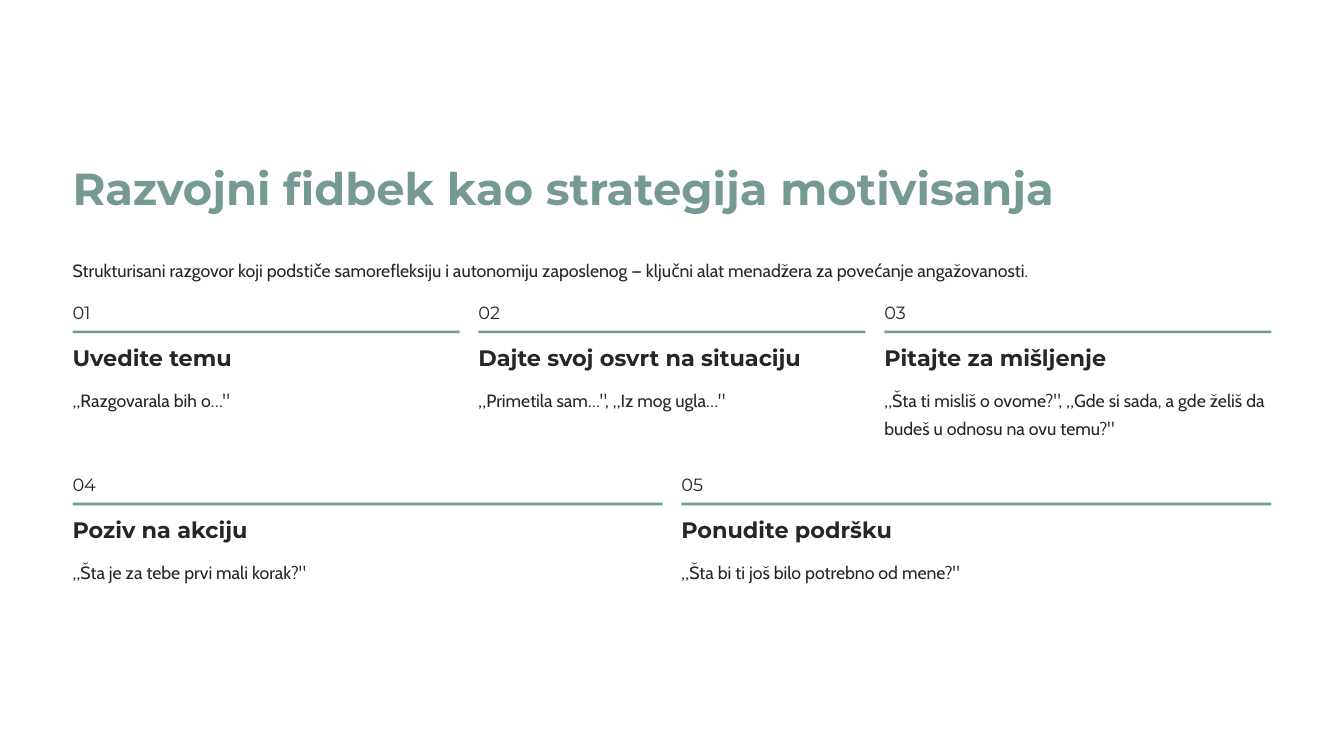
from pptx import Presentation
from pptx.dml.color import RGBColor
from pptx.enum.shapes import MSO_SHAPE
from pptx.enum.text import MSO_ANCHOR, MSO_AUTO_SIZE, PP_ALIGN
from pptx.util import Inches, Pt

RECTANGLE = MSO_SHAPE.RECTANGLE
TOP, MIDDLE = MSO_ANCHOR.TOP, MSO_ANCHOR.MIDDLE
LEFT = PP_ALIGN.LEFT
NO_AUTOFIT = MSO_AUTO_SIZE.NONE

# Content
TITLE = "Razvojni fidbek kao strategija motivisanja"
INTRO = ("Strukturisani razgovor koji podstiče samorefleksiju i autonomiju zaposlenog — "
         "ključni alat menadžera za povećanje angažovanosti.")
# Rows of steps: heading, heading width, example phrases
STEP_ROWS = [
    [
        ("Uvedite temu", 1.7, '„Razgovarala bih o…"'),
        ("Dajte svoj osvrt na situaciju", 2.44, '„Primetila sam…", „Iz mog ugla…"'),
        ("Pitajte za mišljenje", 1.7,
         '„Šta ti misliš o ovome?", „Gde si sada, a gde želiš da budeš u odnosu na ovu temu?"'),
    ],
    [
        ("Poziv na akciju", 1.7, '„Šta je za tebe prvi mali korak?"'),
        ("Ponudite podršku", 1.7, '„Šta bi ti još bilo potrebno od mene?"'),
    ],
]

# Layout in inches, on a 16:9 slide
SLIDE_WIDTH = 10
SLIDE_HEIGHT = SLIDE_WIDTH * 9 / 16
MARGIN, GAP = 0.54, 0.14
CONTENT_WIDTH = SLIDE_WIDTH - 2 * MARGIN
FIRST_ROW_TOP, ROW_STEP = 2.24, 1.28
RULE_OFFSET, HEADING_OFFSET, PHRASE_OFFSET = 0.22, 0.31, 0.61

# Formats
GREEN, DARK, WHITE = "769993", "272525", "FFFFFF"
FORMATS = {
    "title": {"name": "Montserrat", "size": Pt(24), "bold": True},
    "heading": {"name": "Montserrat", "size": Pt(12), "bold": True},
    "number": {"name": "Montserrat", "size": Pt(9.5), "bold": False},
    "body": {"name": "Cabin", "size": Pt(9.5), "bold": False},
}
LINE_SPACING = {"title": 1.04, "heading": 1.04, "number": 1.0, "body": 1.33}


def set_fill(fill, color):
    fill.solid()
    fill.fore_color.rgb = RGBColor.from_string(color)


def write_text(shape, text, style, color=DARK, anchor=TOP):
    frame = shape.text_frame
    frame_format = {"word_wrap": True, "auto_size": NO_AUTOFIT, "vertical_anchor": anchor,
                    "margin_left": 0, "margin_top": 0, "margin_right": 0, "margin_bottom": 0}
    for attribute, value in frame_format.items():
        setattr(frame, attribute, value)
    paragraph = frame.paragraphs[0]
    paragraph.text = text
    paragraph.alignment = LEFT
    paragraph.line_spacing = LINE_SPACING[style]
    font = paragraph.runs[0].font
    for attribute, value in FORMATS[style].items():
        setattr(font, attribute, value)
    set_fill(font.fill, color)


def add_text(slide, box, text, style, anchor=TOP):
    shape = slide.shapes.add_textbox(*map(Inches, box))
    write_text(shape, text, style, anchor=anchor)


def add_rule(slide, box):
    rule = slide.shapes.add_shape(RECTANGLE, *map(Inches, box))
    rule.shadow.inherit = False
    set_fill(rule.fill, GREEN)
    rule.line.fill.background()


def add_step(slide, left, top, width, number, step):
    heading, heading_width, phrase = step
    phrase_height = 0.43 if len(phrase) > 60 else 0.22
    add_text(slide, (left, top, 0.27, 0.17), f"{number:02}", "number", MIDDLE)
    add_rule(slide, (left, top + RULE_OFFSET, width, 0.02))
    add_text(slide, (left, top + HEADING_OFFSET, heading_width, 0.21), heading, "heading")
    add_text(slide, (left, top + PHRASE_OFFSET, width, phrase_height), phrase, "body")


def main():
    presentation = Presentation()
    presentation.slide_width = Inches(SLIDE_WIDTH)
    presentation.slide_height = Inches(SLIDE_HEIGHT)
    slide = presentation.slides.add_slide(presentation.slide_layouts[5])
    set_fill(slide.background.fill, WHITE)

    # Title and introduction
    title = slide.shapes.title
    title.left, title.top, title.width, title.height = map(Inches, (MARGIN, 1.18, 7.92, 0.42))
    write_text(title, TITLE, "title", GREEN)
    add_text(slide, (MARGIN, 1.88, 9.41, 0.22), INTRO, "body")

    # Numbered steps, each row sharing the content width equally
    number = 1
    for row, steps in enumerate(STEP_ROWS):
        width = (CONTENT_WIDTH - GAP * (len(steps) - 1)) / len(steps)
        for column, step in enumerate(steps):
            left = MARGIN + column * (width + GAP)
            add_step(slide, left, FIRST_ROW_TOP + row * ROW_STEP, width, number, step)
            number += 1

    presentation.save("out.pptx")


if __name__ == "__main__":
    main()
